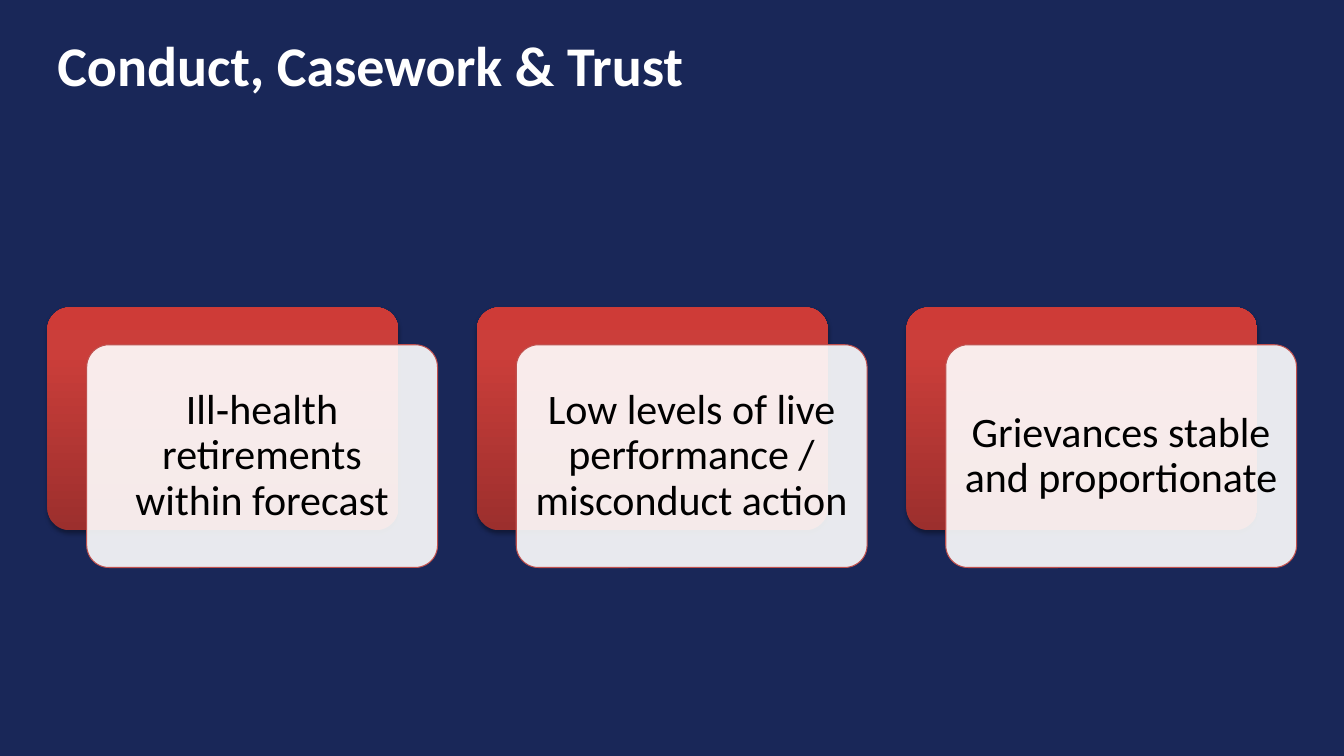
import pptx
import pptx.util
import pptx.dml.color
import pptx.enum.shapes
import pptx.enum.text
import pptx.oxml
import pptx.oxml.ns

WIDE, HIGH = 13.33, 7.5
LEFT, TOP = 0.47, 3.05        # first plate
STEP = 4.26                   # column pitch
CARD_W, CARD_H = 3.48, 2.21
SHIFT_X, SHIFT_Y = 0.39, 0.37  # card against its plate
FONT = "Calibri"
NS = 'xmlns:a="http://schemas.openxmlformats.org/drawingml/2006/main"'
STOPS = [(0, "9C2F2D"), (80, "CB3E3A"), (100, "CE3B37")]
NOTES = [
    "Ill‑health retirements within forecast",
    "Low levels of live performance / misconduct action",
    "Grievances stable and proportionate",
]


def color(code):
    return pptx.dml.color.RGBColor.from_string(code)


def box(*sizes):
    return [pptx.util.Inches(size) for size in sizes]


def write(shape, text, size, code, inset, bold=False):
    frame = shape.text_frame
    frame.word_wrap = True
    frame.vertical_anchor = pptx.enum.text.MSO_ANCHOR.MIDDLE
    frame.margin_left = frame.margin_right = pptx.util.Inches(inset)
    frame.text = text
    line = frame.paragraphs[0]
    line.line_spacing = 0.9
    font = line.runs[0].font
    font.name, font.size, font.bold = FONT, pptx.util.Pt(size), bold
    font.color.rgb = color(code)
    return line


def panel(slide, left, top):
    kind = pptx.enum.shapes.MSO_SHAPE.ROUNDED_RECTANGLE
    shape = slide.shapes.add_shape(kind, *box(left, top, CARD_W, CARD_H))
    shape.adjustments[0] = 0.1
    shape.shadow.inherit = False
    return shape


def plate(slide, left, top):
    shape = panel(slide, left, top)
    shape.line.fill.background()
    # Three-stop gradient, dark at the foot
    stops = "".join(
        f'<a:gs pos="{pos * 1000}"><a:srgbClr val="{code}"/></a:gs>'
        for pos, code in STOPS)
    fill = pptx.oxml.parse_xml(
        f'<a:gradFill {NS} rotWithShape="1"><a:gsLst>{stops}</a:gsLst>'
        '<a:lin ang="16200000" scaled="0"/></a:gradFill>')
    props = shape.element.spPr
    props.find(pptx.oxml.ns.qn("a:prstGeom")).addnext(fill)
    # Soft shadow straight below
    blur, drop = pptx.util.Pt(3.1), pptx.util.Pt(1.8)
    props.find(pptx.oxml.ns.qn("a:effectLst")).append(pptx.oxml.parse_xml(
        f'<a:outerShdw {NS} blurRad="{blur}" dist="{drop}" dir="5400000" '
        'rotWithShape="0"><a:srgbClr val="000000"><a:alpha val="35000"/>'
        '</a:srgbClr></a:outerShdw>'))


def card(slide, left, top, text):
    shape = panel(slide, left, top)
    shape.fill.solid()
    shape.fill.fore_color.rgb = color("FFFFFF")
    tint = shape.element.spPr.find(".//" + pptx.oxml.ns.qn("a:srgbClr"))
    tint.append(pptx.oxml.parse_xml(f'<a:alpha {NS} val="90000"/>'))
    shape.line.color.rgb = color("C0504D")
    shape.line.width = pptx.util.Pt(0.75)
    line = write(shape, text, 30, "000000", 0.11)
    line.alignment = pptx.enum.text.PP_ALIGN.CENTER


def main():
    deck = pptx.Presentation()
    deck.slide_width, deck.slide_height = box(WIDE, HIGH)
    slide = deck.slides.add_slide(deck.slide_layouts[6])
    slide.background.fill.solid()
    slide.background.fill.fore_color.rgb = color("192758")

    # Title
    title = slide.shapes.add_textbox(*box(LEFT, 0.05, 9.55, 1.25))
    write(title, "Conduct, Casework & Trust", 40, "FFFFFF", 0.1, bold=True)

    # Three plates, each with a card on top
    for col, note in enumerate(NOTES):
        left = LEFT + col * STEP
        plate(slide, left, TOP)
        card(slide, left + SHIFT_X, TOP + SHIFT_Y, note)

    deck.save("out.pptx")


if __name__ == "__main__":
    main()
